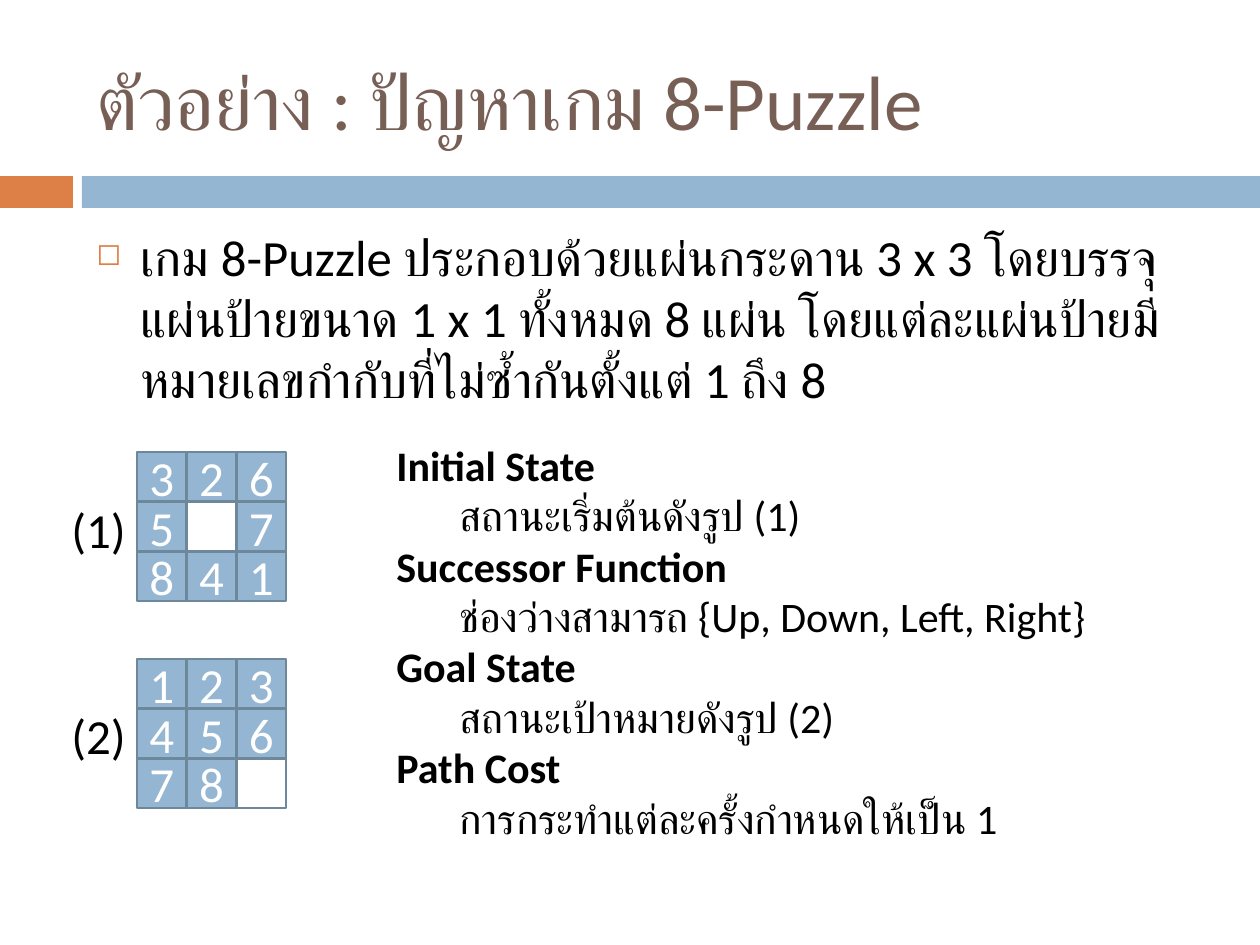
from lxml import etree
from pptx import Presentation
from pptx.dml.color import RGBColor
from pptx.enum.lang import MSO_LANGUAGE_ID as Language
from pptx.enum.shapes import MSO_SHAPE as Shape
from pptx.enum.text import MSO_ANCHOR as Anchor, MSO_AUTO_SIZE as AutoSize, PP_ALIGN as Align
from pptx.oxml.ns import qn
from pptx.util import Pt

# Content
TITLE = "ตัวอย่าง : ปัญหาเกม 8-Puzzle"
INTRO = ("เกม 8-Puzzle ประกอบด้วยแผ่นกระดาน 3 x 3 โดยบรรจุแผ่นป้ายขนาด 1 x 1 "
         "ทั้งหมด 8 แผ่น โดยแต่ละแผ่นป้ายมีหมายเลขกำกับที่ไม่ซ้ำกันตั้งแต่ 1 ถึง 8")
BOARDS = [  # label, label top, board top, tiles row by row
    ("(1)", 493, 452, "3265 7841"),
    ("(2)", 699, 659, "12345678 "),
]
DEFINITIONS = [
    ("Initial State", "สถานะเริ่มต้นดังรูป (1)"),
    ("Successor Function", "ช่องว่างสามารถ {Up, Down, Left, Right}"),
    ("Goal State", "สถานะเป้าหมายดังรูป (2)"),
    ("Path Cost", "การกระทำแต่ละครั้งกำหนดให้เป็น 1"),
]
BANDS = [(0, 73, "DD8047"), (82, 1178, "94B6D2")]  # left, width, fill

# Layout in px
SCALE = 914400 / 126
BOARD_LEFT, BOARD_SIDE, GRID = 137, 149, 3
FONT = "Calibri"


def px(value):
    return round(value * SCALE)


def colour(text):
    return RGBColor.from_string(text)


def write(para, text, size, fill="000000", bold=False):
    span = para.add_run()
    span.text = text
    settings = {"name": FONT, "size": Pt(size), "bold": bold, "language_id": Language.THAI}
    for key, value in settings.items():
        setattr(span.font, key, value)
    span.font.color.rgb = colour(fill)
    # Thai letters use the complex-script font
    etree.SubElement(span.font._element, qn("a:cs"), typeface=FONT)


def add_rect(page, left, top, width, height, fill, line=None):
    rect = page.shapes.add_shape(Shape.RECTANGLE, *map(px, (left, top, width, height)))
    rect.shadow.inherit = False
    rect.fill.solid()
    rect.fill.fore_color.rgb = colour(fill)
    if line:
        rect.line.color.rgb = colour(line)
        rect.line.width = Pt(1.5)
    else:
        rect.line.fill.background()
    return rect


def add_text(page, left, top, width, height, **frame_format):
    frame = page.shapes.add_textbox(*map(px, (left, top, width, height))).text_frame
    for key, value in {"word_wrap": True, **frame_format}.items():
        setattr(frame, key, value)
    return frame


def add_bullet(para, char, fill, percent, indent):
    props = para._p.get_or_add_pPr()
    props.set("marL", str(px(indent)))
    props.set("indent", str(-px(indent)))
    tint = etree.SubElement(props, qn("a:buClr"))
    etree.SubElement(tint, qn("a:srgbClr"), val=fill)
    etree.SubElement(props, qn("a:buSzPct"), val=str(percent * 1000))
    etree.SubElement(props, qn("a:buChar"), char=char)


def add_board(page, top, tiles):
    side = BOARD_SIDE / GRID
    for index, number in enumerate(tiles):
        row, column = divmod(index, GRID)
        blank = number == " "
        tile = add_rect(page, BOARD_LEFT + column * side, top + row * side, side, side,
                        "FFFFFF" if blank else "94B6D2", "6D879B")
        if not blank:
            tile.text_frame.vertical_anchor = Anchor.MIDDLE
            para = tile.text_frame.paragraphs[0]
            para.alignment = Align.CENTER
            write(para, number, 28, "FFFFFF")


def main():
    deck = Presentation()
    deck.slide_width, deck.slide_height = px(1260), px(945)
    page = deck.slides.add_slide(deck.slide_layouts[6])

    # Colour bands under the title
    for left, width, fill in BANDS:
        add_rect(page, left, 176, width, 32, fill)

    # Title and introduction
    title = add_text(page, 84, 32, 1124, 136, vertical_anchor=Anchor.MIDDLE)
    write(title.paragraphs[0], TITLE, 44, "775F55")
    intro = add_text(page, 84, 220, 1124, 620).paragraphs[0]
    intro.space_before = Pt(7)
    add_bullet(intro, "◻", "DD8047", 60, 44)
    write(intro, INTRO, 29)

    # Puzzle boards with their labels
    for label, label_top, board_top, tiles in BOARDS:
        add_board(page, board_top, tiles)
        frame = add_text(page, 59, label_top, 88, 72, auto_size=AutoSize.SHAPE_TO_FIT_TEXT)
        write(frame.paragraphs[0], label, 28)

    # Problem definition
    frame = add_text(page, 384, 433, 808, 420, auto_size=AutoSize.SHAPE_TO_FIT_TEXT)
    lines = [line for term, meaning in DEFINITIONS
             for line in ((term, True), ("\t" + meaning, False))]
    for index, (text, bold) in enumerate(lines):
        para = frame.add_paragraph() if index else frame.paragraphs[0]
        write(para, text, 24, bold=bold)

    deck.save("out.pptx")


if __name__ == "__main__":
    main()
